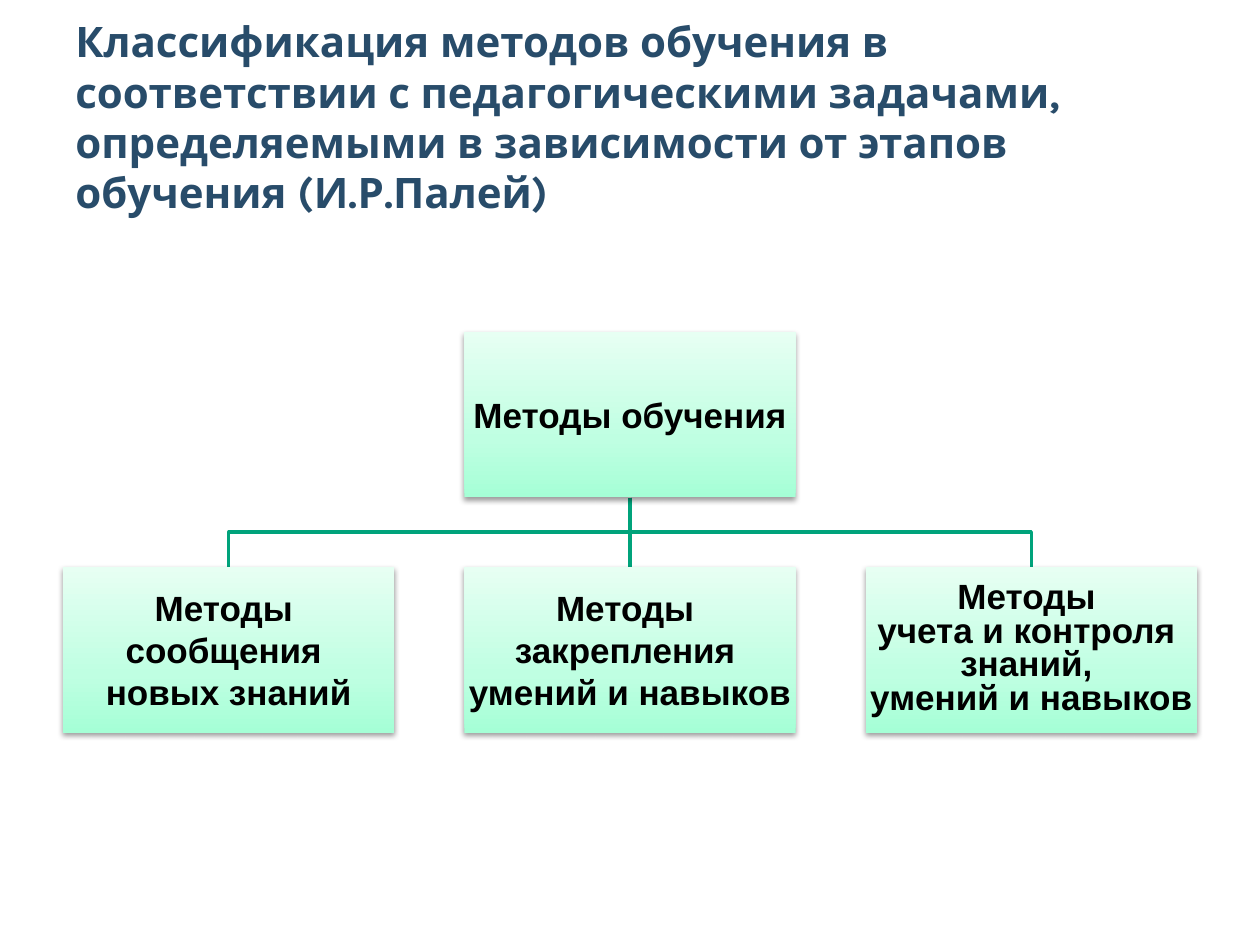
"""Builds a slide with a tree of teaching methods."""
from copy import deepcopy

from lxml import etree
from pptx import Presentation
from pptx.dml.color import RGBColor as RGB
from pptx.enum.shapes import MSO_CONNECTOR as CONN, MSO_SHAPE as SHAPE
from pptx.enum.text import MSO_ANCHOR as ANCHOR, PP_ALIGN as ALIGN
from pptx.oxml import parse_xml
from pptx.oxml.ns import nsdecls, qn
from pptx.util import Cm, Pt

TITLE = ("Классификация методов обучения в соответствии с педагогическими задачами, "
         "определяемыми в зависимости от этапов обучения (И.Р.Палей)")
ROOT = ["Методы обучения"]
CHILDREN = [
    (["Методы ", "сообщения ", "новых знаний"], None),
    (["Методы ", "закрепления ", "умений и навыков"], None),
    (["Методы ", "учета и контроля ", "знаний, ", "умений и навыков"], 0.8),
]
COLORS = {"title": "284C6A", "text": "000000", "line": "00A37B", "shadow": "000000"}
STOPS = [(0, "A5FFD6"), (0.35, "BFFFE2"), (1, "E7FFF3")]
TITLE_FONT = {"name": "Karla", "size": Pt(24), "bold": True}
BOX_FONT = {"name": "Arial", "size": Pt(20), "bold": True}
INSETS = ("margin_left", "margin_top", "margin_right", "margin_bottom")

BOX_W, BOX_H = 6.68, 3.34
LEFT, STEP = 1.27, 8.09
ROOT_TOP, CHILD_TOP = 6.69, 11.43
MID_X = LEFT + STEP + BOX_W / 2
ROOT_BOTTOM = ROOT_TOP + BOX_H
MID_Y = (ROOT_BOTTOM + CHILD_TOP) / 2


def set_font(font, values, color):
    for key, value in values.items():
        setattr(font, key, value)
    font.color.rgb = RGB.from_string(COLORS[color])


def style_line(s):
    s.line.color.rgb = RGB.from_string(COLORS["line"])
    s.line.width = Pt(2)


def add_title(slide):
    tf = slide.shapes.add_textbox(Cm(1.27), Cm(0.76), Cm(22.86), Cm(3.18)).text_frame
    tf.word_wrap = True
    tf.vertical_anchor = ANCHOR.MIDDLE
    r = tf.paragraphs[0].add_run()
    r.text = TITLE
    set_font(r.font, TITLE_FONT, "title")


def add_branch(slide, x):
    if abs(x - MID_X) < 0.01:
        s = slide.shapes.add_connector(CONN.STRAIGHT, Cm(x), Cm(ROOT_BOTTOM), Cm(x), Cm(CHILD_TOP))
        etree.SubElement(s._element.spPr, qn("a:effectLst"))
    else:
        fb = slide.shapes.build_freeform(Cm(MID_X), Cm(ROOT_BOTTOM))
        corners = [(MID_X, MID_Y), (x, MID_Y), (x, CHILD_TOP)]
        fb.add_line_segments([(Cm(a), Cm(b)) for a, b in corners], close=False)
        s = fb.convert_to_shape()
        s.shadow.inherit = False
        s.fill.background()
    style_line(s)


def fill_gradient(s):
    s.fill.gradient()
    s.fill.gradient_angle = 90
    gs_list = s._element.spPr.find(qn("a:gradFill")).find(qn("a:gsLst"))
    gs_list.append(deepcopy(gs_list[-1]))
    for stop, (position, color) in zip(s.fill.gradient_stops, STOPS):
        stop.position = position
        stop.color.rgb = RGB.from_string(color)


def add_shadow(s):
    s.shadow.inherit = False
    s._element.spPr.find(qn("a:effectLst")).append(parse_xml(
        f'<a:outerShdw {nsdecls("a")} blurRad="{Pt(3.1)}" dist="{Pt(1.6)}" dir="5400000" '
        f'rotWithShape="0"><a:srgbClr val="{COLORS["shadow"]}"><a:alpha val="38000"/>'
        '</a:srgbClr></a:outerShdw>'))


def add_box(slide, x, y, lines, spacing=None):
    s = slide.shapes.add_shape(SHAPE.RECTANGLE, Cm(x), Cm(y), Cm(BOX_W), Cm(BOX_H))
    s.line.fill.background()
    fill_gradient(s)
    add_shadow(s)
    tf = s.text_frame
    tf.word_wrap = True
    tf.vertical_anchor = ANCHOR.MIDDLE
    for side in INSETS:
        setattr(tf, side, Cm(0.03))
    for i, line in enumerate(lines):
        p = tf.add_paragraph() if i else tf.paragraphs[0]
        p.alignment = ALIGN.CENTER
        p.line_spacing = spacing
        r = p.add_run()
        r.text = line
        set_font(r.font, BOX_FONT, "text")


def main():
    prs = Presentation()
    prs.slide_width, prs.slide_height = Cm(25.4), Cm(19.05)
    slide = prs.slides.add_slide(prs.slide_layouts[6])
    add_title(slide)
    lefts = [LEFT + STEP * i for i in range(len(CHILDREN))]
    for x in lefts:
        add_branch(slide, x + BOX_W / 2)
    add_box(slide, MID_X - BOX_W / 2, ROOT_TOP, ROOT)
    for x, (lines, spacing) in zip(lefts, CHILDREN):
        add_box(slide, x, CHILD_TOP, lines, spacing)
    prs.save("out.pptx")


if __name__ == "__main__":
    main()
